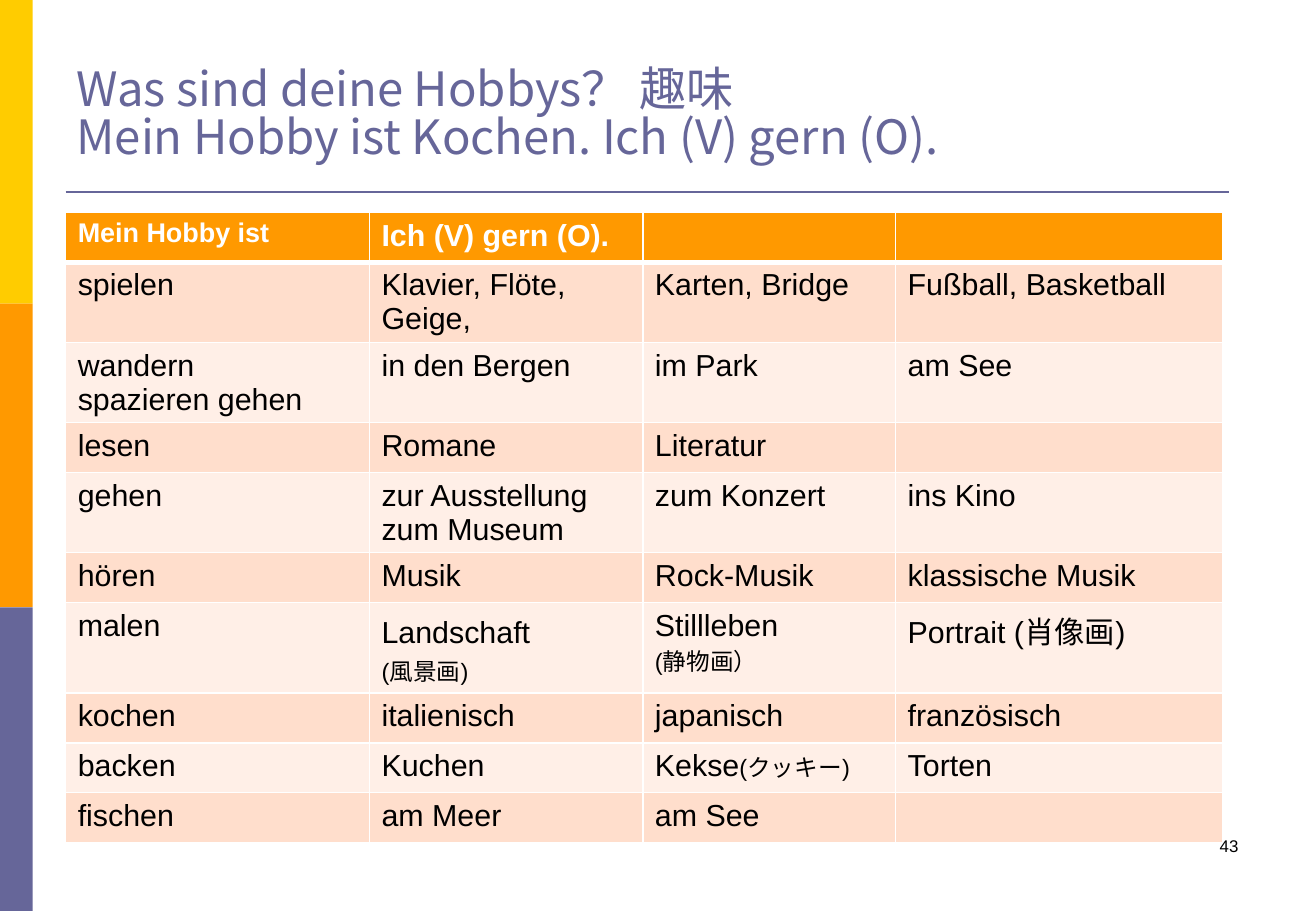
import dataclasses
import lxml.etree
import pptx
import pptx.dml.color
import pptx.enum.shapes
import pptx.enum.text
import pptx.oxml.ns
import pptx.util

Inches = pptx.util.Inches
qn = pptx.oxml.ns.qn
ALIGN = pptx.enum.text.PP_ALIGN
ANCHOR = pptx.enum.text.MSO_ANCHOR
SHAPE = pptx.enum.shapes.MSO_SHAPE


@dataclasses.dataclass
class Theme:
    yellow: str = "FFCC00"
    orange: str = "FF9900"
    violet: str = "666699"
    white: str = "FFFFFF"
    black: str = "000000"
    bands: tuple = ("FFDECC", "FFEFE7")
    latin: str = "Arial"
    asian: str = "Noto Sans CJK JP"
    title: int = 28
    head: int = 16
    body: int = 18
    small: int = 14
    number: int = 10


theme = Theme()


def rgb(code):
    return pptx.dml.color.RGBColor.from_string(code)


def style(run, size, color, name=theme.latin, bold=False):
    """Format a run, with one font for its East Asian letters."""
    look = {"size": pptx.util.Pt(size), "name": name, "bold": bold}
    for key, value in look.items():
        setattr(run.font, key, value)
    run.font.color.rgb = rgb(color)
    asian = lxml.etree.SubElement(run.font._element, qn("a:ea"))
    asian.set("typeface", theme.asian)


deck = pptx.Presentation()
deck.slide_width, deck.slide_height = Inches(10.83), Inches(7.5)
slide = deck.slides.add_slide(deck.slide_layouts[5])

# Side bars
for i, color in enumerate((theme.yellow, theme.orange, theme.violet)):
    bar = slide.shapes.add_shape(
        SHAPE.RECTANGLE, 0, Inches(2.5 * i), Inches(0.27), Inches(2.5))
    bar.shadow.inherit = False
    bar.fill.solid()
    bar.fill.fore_color.rgb = rgb(color)
    bar.line.fill.background()

# Rule under the title
rule = slide.shapes.add_connector(
    pptx.enum.shapes.MSO_CONNECTOR.STRAIGHT,
    Inches(0.54), Inches(1.58), Inches(10.11), Inches(1.58))
rule.line.color.rgb = rgb(theme.violet)
rule.line.width = pptx.util.Pt(1.5)
lxml.etree.SubElement(rule._element.spPr, qn("a:effectLst"))

# Title
title = slide.shapes.title
place = {"left": 0.53, "top": 0.13, "width": 9.75, "height": 1.24}
for key, value in place.items():
    setattr(title, key, Inches(value))
frame = title.text_frame
layout = {
    "auto_size": pptx.enum.text.MSO_AUTO_SIZE.NONE,
    "vertical_anchor": ANCHOR.BOTTOM,
    "margin_bottom": Inches(0.02),
    "word_wrap": True,
}
for key, value in layout.items():
    setattr(frame, key, value)
frame.text = "Was sind deine Hobbys？ 趣味\vMein Hobby ist Kochen. Ich (V) gern (O)."
lines = frame.paragraphs[0]
lines.alignment = ALIGN.LEFT
lines.line_spacing = 0.84
for run in lines.runs:
    style(run, theme.title, theme.violet, theme.asian)

# Hobby table: "\n" starts a paragraph, "~" starts small text
hobbies = [
    ("Mein Hobby ist", "Ich (V) gern (O).", "", ""),
    ("spielen", "Klavier, Flöte, Geige,", "Karten, Bridge", "Fußball, Basketball"),
    ("wandern\nspazieren gehen", "in den Bergen", "im Park", "am See"),
    ("lesen", "Romane", "Literatur", ""),
    ("gehen", "zur Ausstellung\nzum Museum", "zum Konzert", "ins Kino"),
    ("hören", "Musik", "Rock-Musik", "klassische Musik"),
    ("malen", "Landschaft　\n~(風景画)", "Stillleben\n~(静物画）", "Portrait (肖像画)"),
    ("kochen", "italienisch", "japanisch", "französisch"),
    ("backen", "Kuchen", "Kekse~(クッキー)", "Torten"),
    ("fischen", "am Meer", "am See", ""),
]
heights = [0.41, 0.66, 0.66, 0.41, 0.66, 0.41, 0.74, 0.41, 0.41, 0.41]
table = slide.shapes.add_table(
    len(hobbies), 4, Inches(0.54), Inches(1.75),
    Inches(9.52), Inches(sum(heights))).table
table.first_row = table.horz_banding = False
for column, width in zip(table.columns, (2.5, 2.25, 2.08, 2.69)):
    column.width = Inches(width)

for r, words in enumerate(hobbies):
    table.rows[r].height = Inches(heights[r])
    for c, text in enumerate(words):
        cell = table.cell(r, c)
        cell.fill.solid()
        cell.fill.fore_color.rgb = rgb(theme.bands[(r - 1) % 2] if r else theme.orange)
        for i, side in enumerate(("lnL", "lnR", "lnT", "lnB")):
            thick = (r, side) in ((0, "lnB"), (1, "lnT"))
            edge = lxml.etree.Element(qn("a:" + side), w=str(pptx.util.Pt(3 if thick else 1)))
            fill = lxml.etree.SubElement(edge, qn("a:solidFill"))
            lxml.etree.SubElement(fill, qn("a:srgbClr"), val=theme.white)
            cell._tc.tcPr.insert(i, edge)
        for i, line in enumerate(text.split("\n")):
            para = cell.text_frame.paragraphs[0] if i == 0 else cell.text_frame.add_paragraph()
            for j, part in enumerate(line.split("~")):
                if part:
                    run = para.add_run()
                    run.text = part
                    size = theme.small if j else theme.body
                    if r == c == 0:
                        size = theme.head
                    style(run, size, theme.black if r else theme.white, bold=r == 0)

# Slide number
box = slide.shapes.add_textbox(Inches(7.76), Inches(6.83), Inches(2.53), Inches(0.5))
box.text_frame.word_wrap = True
para = box.text_frame.paragraphs[0]
para.alignment = ALIGN.RIGHT
run = para.add_run()
run.text = "43"
style(run, theme.number, theme.black)

deck.save("out.pptx")
